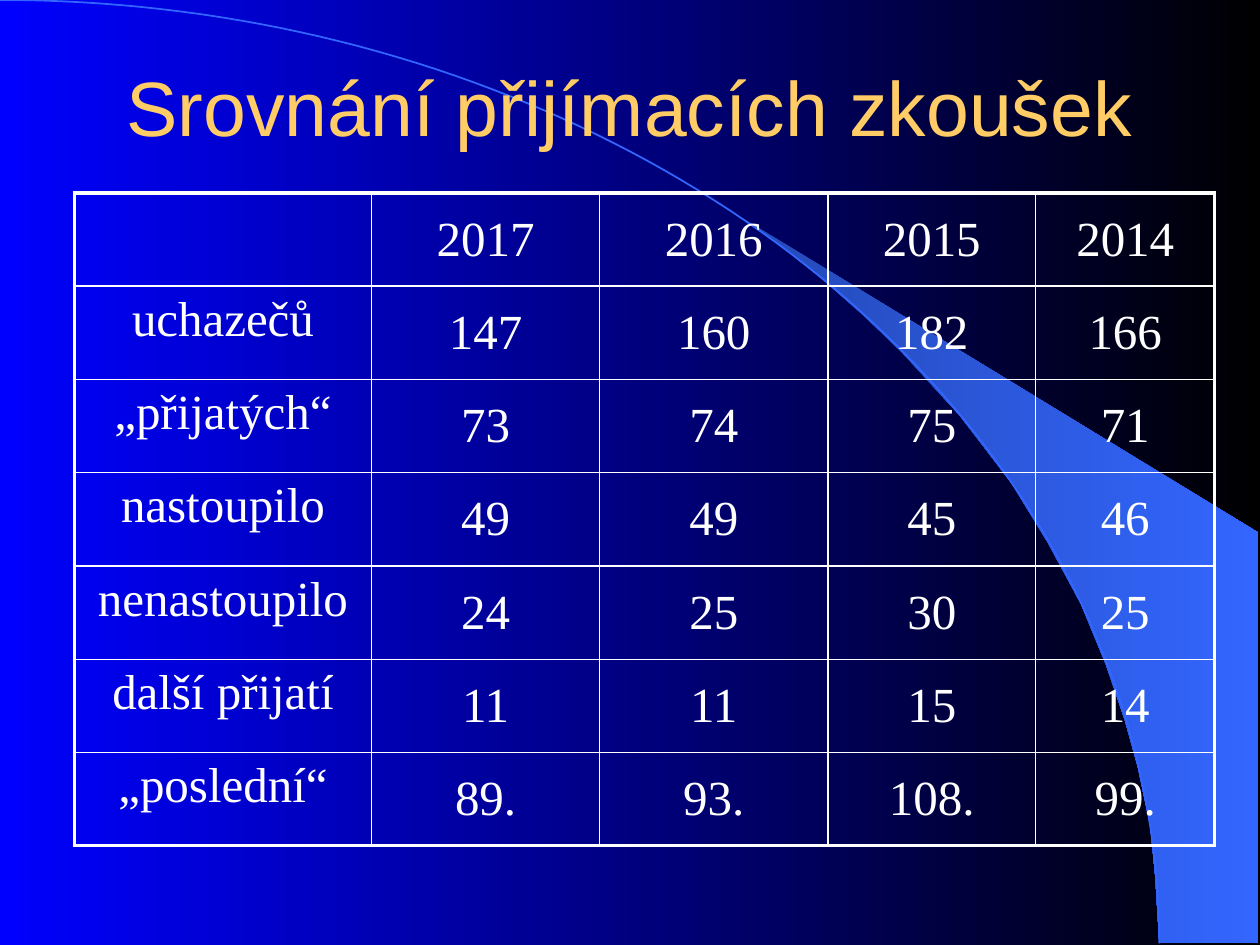
import math
from dataclasses import dataclass

import lxml.etree
import pptx
import pptx.dml.color
import pptx.enum.text
import pptx.oxml.ns
import pptx.util

Cm = pptx.util.Cm
Pt = pptx.util.Pt
RGB = pptx.dml.color.RGBColor
ALIGN = pptx.enum.text.PP_ALIGN
ANCHOR = pptx.enum.text.MSO_ANCHOR

WHITE = RGB(0xFF, 0xFF, 0xFF)
BLACK = RGB(0x00, 0x00, 0x00)
BLUE = RGB(0x00, 0x00, 0xFF)
SKY = RGB(0x33, 0x66, 0xFF)
NAVY = RGB(0x24, 0x49, 0xB6)
GOLD = RGB(0xFF, 0xCC, 0x66)

THIN, THICK = 1, 2.25


@dataclass
class Row:
    label: str
    values: list[str]


ROWS = [
    Row("", ["2017", "2016", "2015", "2014"]),
    Row("uchazečů", ["147", "160", "182", "166"]),
    Row("„přijatých“", ["73", "74", "75", "71"]),
    Row("nastoupilo", ["49", "49", "45", "46"]),
    Row("nenastoupilo", ["24", "25", "30", "25"]),
    Row("další přijatí", ["11", "11", "15", "14"]),
    Row("„poslední“", ["89.", "93.", "108.", "99."]),
]
COLS = [5.99, 4.6, 4.6, 4.19, 3.61]
HIGH = 1.88

TAIL = [
    (23.37, 19), (25.37, 19.02), (25.37, 10.74), (14.96, 4.39), (15.85, 5.05),
    (16.59, 5.64), (17.4, 6.35), (18.19, 7.11), (19.35, 8.38), (20.4, 9.75),
    (21.13, 10.95), (21.79, 12.17), (22.3, 13.41), (22.68, 14.53),
    (22.94, 15.47), (23.19, 16.66), (23.29, 17.68),
]


def blend(fill, start: RGB, end: RGB) -> None:
    """Fill with a gradient running from left to right."""
    fill.gradient()
    fill.gradient_angle = 0
    for stop, color in zip(fill.gradient_stops, (start, end)):
        stop.color.rgb = color


def outline(slide, points: list[tuple[float, float]], close: bool):
    """Add a freeform through points given in centimetres."""
    spots = [(Cm(x), Cm(y)) for x, y in points]
    pen = slide.shapes.build_freeform(*spots[0])
    pen.add_line_segments(spots[1:], close=close)
    shape = pen.convert_to_shape()
    shape.shadow.inherit = False
    return shape


def draw_comet(slide) -> None:
    tail = outline(slide, TAIL, True)
    blend(tail.fill, NAVY, SKY)
    tail.line.fill.background()

    wide, high, steps = 23.37, 19.02, 90
    turns = [math.pi / 2 * i / steps for i in range(steps + 1)]
    arc = outline(
        slide,
        [(wide * math.sin(t), high * (1 - math.cos(t))) for t in turns],
        False,
    )
    arc.fill.background()
    arc.line.color.rgb = SKY
    arc.line.width = Pt(1)


def write(frame, text: str, face: str, size: float, color: RGB) -> None:
    para = frame.paragraphs[0]
    para.text = text
    para.alignment = ALIGN.CENTER
    para.font.name = face
    para.font.size = Pt(size)
    para.font.color.rgb = color


def border(cell, side: str, width: float) -> None:
    qn = pptx.oxml.ns.qn
    props = cell._tc.get_or_add_tcPr()
    line = lxml.etree.SubElement(props, qn(f"a:ln{side}"), w=str(Pt(width)))
    fill = lxml.etree.SubElement(line, qn("a:solidFill"))
    lxml.etree.SubElement(fill, qn("a:srgbClr"), val=str(WHITE))


def draw_table(slide) -> None:
    frame = slide.shapes.add_table(
        len(ROWS), len(COLS), Cm(1.5), Cm(3.89),
        Cm(sum(COLS)), Cm(HIGH * len(ROWS)),
    )
    table = frame.table
    table.first_row = table.horz_banding = False
    for col, width in zip(table.columns, COLS):
        col.width = Cm(width)
    for r, row in enumerate(ROWS):
        table.rows[r].height = Cm(HIGH)
        for c, text in enumerate([row.label, *row.values]):
            cell = table.cell(r, c)
            outer = {
                "L": c == 0,
                "R": c == len(COLS) - 1,
                "T": r == 0,
                "B": r == len(ROWS) - 1,
            }
            for side, edge in outer.items():
                border(cell, side, THICK if edge else THIN)
            cell.fill.background()
            cell.vertical_anchor = ANCHOR.MIDDLE if c else ANCHOR.TOP
            write(cell.text_frame, text, "Times New Roman", 28, WHITE)


def draw_title(slide) -> None:
    box = slide.shapes.add_textbox(Cm(1.9), Cm(1.12), Cm(21.6), Cm(2.03))
    frame = box.text_frame
    frame.word_wrap = True
    frame.vertical_anchor = ANCHOR.MIDDLE
    write(frame, "Srovnání přijímacích zkoušek", "Arial", 44, GOLD)


def main() -> None:
    deck = pptx.Presentation()
    deck.slide_width, deck.slide_height = Cm(25.4), Cm(19.05)
    slide = deck.slides.add_slide(deck.slide_layouts[6])
    blend(slide.background.fill, BLUE, BLACK)
    draw_comet(slide)
    draw_table(slide)
    draw_title(slide)
    deck.save("out.pptx")


if __name__ == "__main__":
    main()
